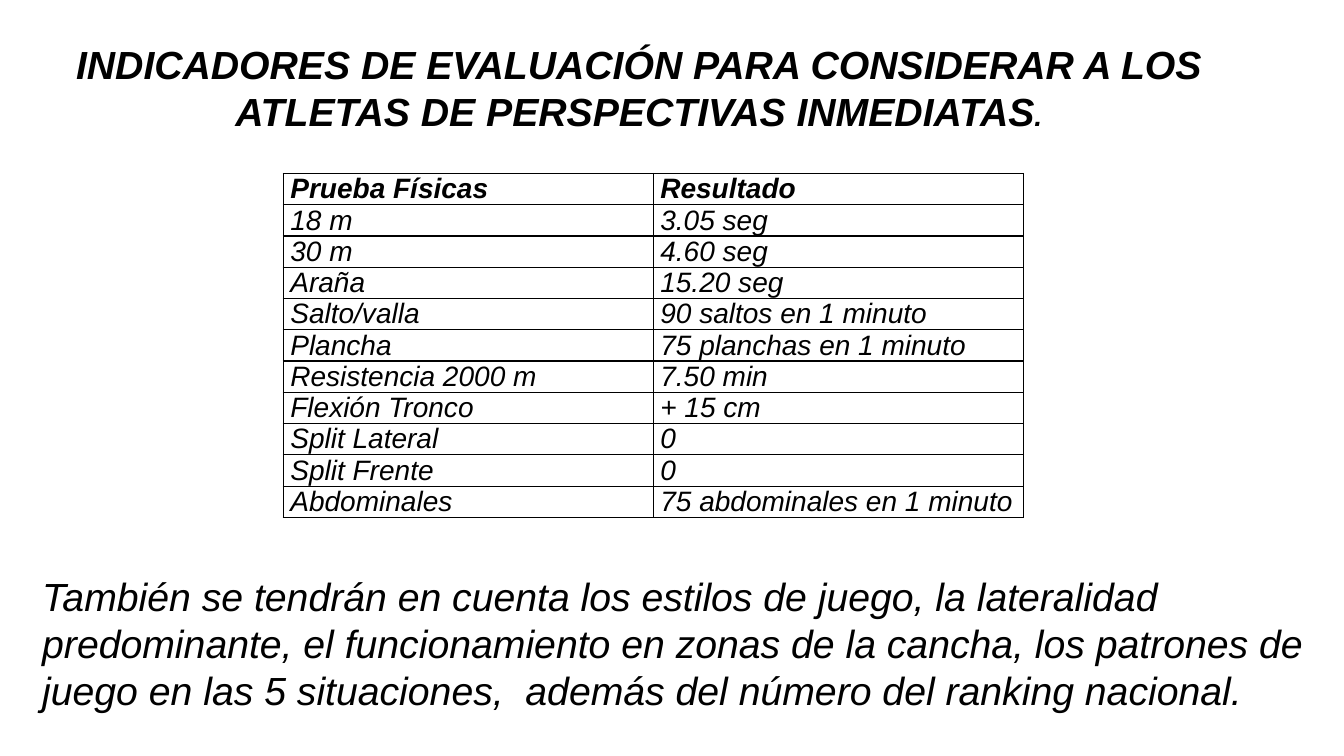
import pptx
import pptx.dml.color
import pptx.enum.text
import pptx.oxml
import pptx.util
from dataclasses import dataclass
from pptx.util import Inches


@dataclass(frozen=True)
class Theme:
    font: str = "Arial"
    ink: str = "000000"
    body_size: int = 28
    table_size: int = 20
    border_width: int = 1


class SlideBuilder:
    def __init__(self, s, theme):
        self.s = s
        self.theme = theme

    def style(self, r, size, bold=False):
        r.font.name = self.theme.font
        r.font.size = pptx.util.Pt(size)
        r.font.bold = bold
        r.font.italic = True
        r.font.color.rgb = pptx.dml.color.RGBColor.from_string(self.theme.ink)

    def text(self, box, parts, align, bold=False):
        tf = self.s.shapes.add_textbox(*map(Inches, box)).text_frame
        tf.word_wrap = True
        tf.vertical_anchor = pptx.enum.text.MSO_ANCHOR.MIDDLE
        p = tf.paragraphs[0]
        p.alignment = align
        for words, size in parts:
            r = p.add_run()
            r.text = words
            self.style(r, size, bold)

    def border(self, cell):
        props = cell._tc.get_or_add_tcPr()
        width = pptx.util.Pt(self.theme.border_width)
        for i, side in enumerate(("lnL", "lnR", "lnT", "lnB")):
            props.insert(i, pptx.oxml.parse_xml(
                f'<a:{side} xmlns:a="http://schemas.openxmlformats.org/drawingml/2006/main" '
                f'w="{width}"><a:solidFill><a:srgbClr val="{self.theme.ink}"/>'
                f'</a:solidFill></a:{side}>'))

    def table(self, left, top, col_width, row_height, rows):
        columns = len(rows[0])
        table = self.s.shapes.add_table(
            len(rows), columns, Inches(left), Inches(top),
            Inches(col_width * columns), Inches(row_height * len(rows))).table
        table.horz_banding = False
        for i, row in enumerate(rows):
            for j, value in enumerate(row):
                cell = table.cell(i, j)
                cell.fill.background()
                cell.margin_left = cell.margin_right = Inches(0.07)
                cell.margin_top = cell.margin_bottom = 0
                cell.text_frame.text = value
                r = cell.text_frame.paragraphs[0].runs[0]
                self.style(r, self.theme.table_size, bold=i == 0)
                self.border(cell)


RESULTS = [
    ("Prueba Físicas", "Resultado"),
    ("18 m", "3.05 seg"),
    ("30 m", "4.60 seg"),
    ("Araña", "15.20 seg"),
    ("Salto/valla", "90 saltos en 1 minuto"),
    ("Plancha", "75 planchas en 1 minuto"),
    ("Resistencia 2000 m", "7.50 min"),
    ("Flexión Tronco", "+ 15 cm"),
    ("Split Lateral", "0"),
    ("Split Frente", "0"),
    ("Abdominales", "75 abdominales en 1 minuto"),
]


def main():
    prs = pptx.Presentation()
    prs.slide_width = Inches(13.33)
    prs.slide_height = Inches(7.5)
    theme = Theme()
    builder = SlideBuilder(prs.slides.add_slide(prs.slide_layouts[6]), theme)
    align = pptx.enum.text.PP_ALIGN

    builder.table(2.81, 1.72, 3.67, 0.28, RESULTS)
    builder.text(
        (0.49, 0.35, 11.69, 1.04),
        [("INDICADORES DE EVALUACIÓN PARA CONSIDERAR A LOS ATLETAS "
          "DE PERSPECTIVAS INMEDIATAS", theme.body_size), (".", theme.table_size)],
        align.CENTER, bold=True)
    builder.text(
        (0.32, 5.58, 13.02, 1.6),
        [("También se tendrán en cuenta los estilos de juego, la lateralidad "
          "predominante, el funcionamiento en zonas de la cancha, los patrones de "
          "juego en las 5 situaciones,  además del número del ranking nacional.",
          theme.body_size)],
        align.LEFT)
    prs.save("out.pptx")


if __name__ == "__main__":
    main()
